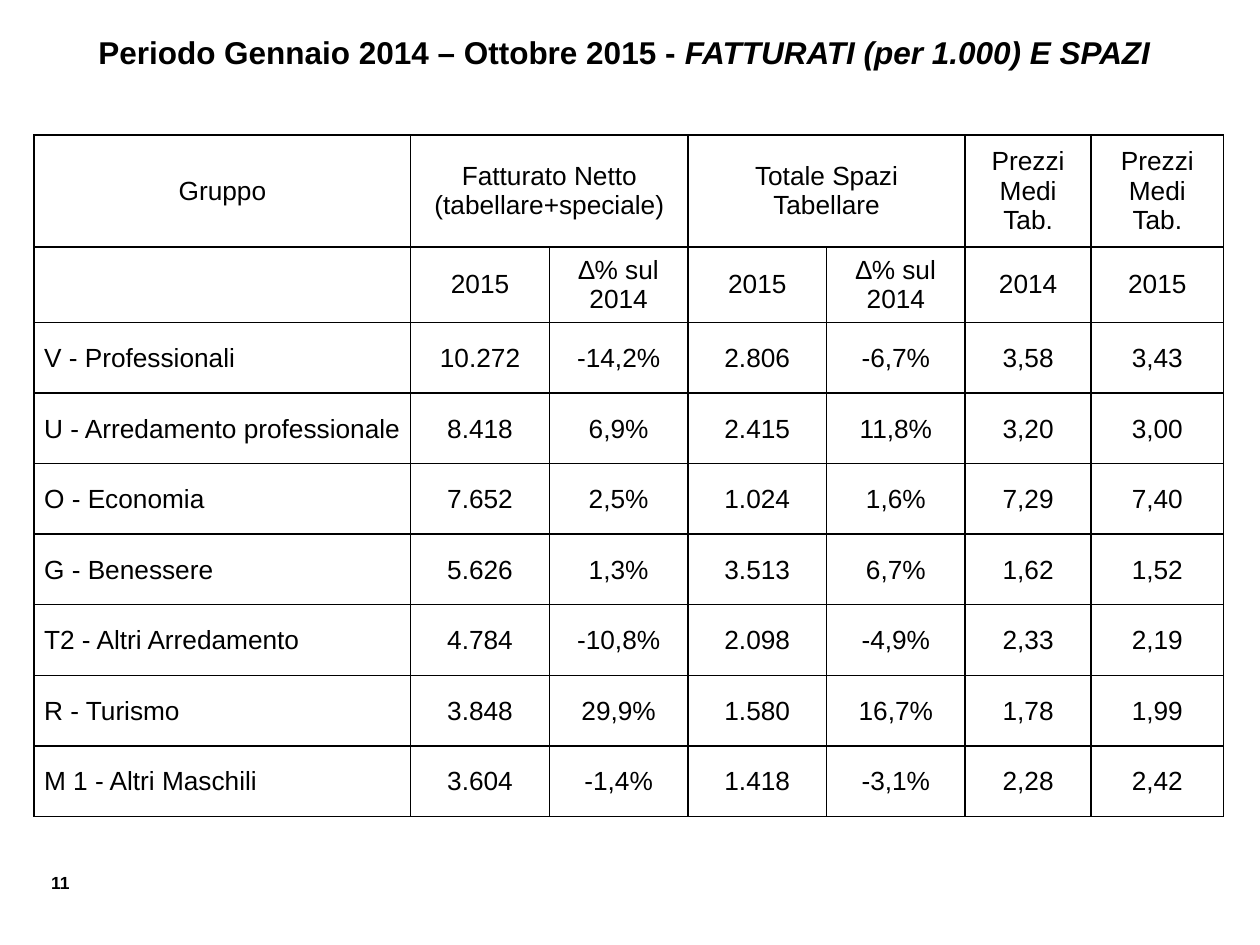
from dataclasses import dataclass

from lxml import etree
from pptx import Presentation
from pptx.dml.color import RGBColor
from pptx.enum.text import MSO_ANCHOR, PP_ALIGN
from pptx.oxml.ns import qn
from pptx.util import Inches, Pt

LEFT, MID, RIGHT = PP_ALIGN.LEFT, PP_ALIGN.CENTER, PP_ALIGN.RIGHT
CENTRE = MSO_ANCHOR.MIDDLE
BLACK = RGBColor(0, 0, 0)
FACE = "Arial"
WIDE, HIGH = 10, 7.5
COLS = [2.99, 1.1, 1.1, 1.1, 1.1, 1, 1.05]
HEAD_ROWS = [0.89, 0.6]
DATA_ROW = 0.56


@dataclass
class Label:
    left: float  # shares of the slide
    top: float
    width: float
    height: float
    runs: list[tuple[str, bool]]  # text, italic
    size: float
    align: PP_ALIGN


LABELS = [
    Label(0.027, 0.028, 0.937, 0.095,
          [("Periodo Gennaio 2014 – Ottobre 2015 - ", False),
           ("FATTURATI (per 1.000) E SPAZI", True)], 18, MID),
    Label(0.019, 0.916, 0.046, 0.036, [("11", False)], 10, RIGHT),
]

HEADS = [
    ["Gruppo", "Fatturato Netto (tabellare+speciale)", "",
     "Totale Spazi Tabellare", "", "Prezzi Medi Tab.", "Prezzi Medi Tab."],
    ["", "2015", "∆% sul 2014", "2015", "∆% sul 2014", "2014", "2015"],
]
DATA = [
    ["V - Professionali", "10.272", "-14,2%", "2.806", "-6,7%", "3,58", "3,43"],
    ["U - Arredamento professionale", "8.418", "6,9%", "2.415", "11,8%", "3,20", "3,00"],
    ["O - Economia", "7.652", "2,5%", "1.024", "1,6%", "7,29", "7,40"],
    ["G - Benessere", "5.626", "1,3%", "3.513", "6,7%", "1,62", "1,52"],
    ["T2 - Altri Arredamento", "4.784", "-10,8%", "2.098", "-4,9%", "2,33", "2,19"],
    ["R - Turismo", "3.848", "29,9%", "1.580", "16,7%", "1,78", "1,99"],
    ["M 1 - Altri Maschili", "3.604", "-1,4%", "1.418", "-3,1%", "2,28", "2,42"],
]


def style(para, size: float, align: PP_ALIGN, bold: bool = False) -> None:
    para.alignment = align
    font = para.font
    font.name, font.size, font.bold = FACE, Pt(size), bold
    font.color.rgb = BLACK


def add_label(slide, label: Label) -> None:
    box = slide.shapes.add_textbox(
        Inches(label.left * WIDE), Inches(label.top * HIGH),
        Inches(label.width * WIDE), Inches(label.height * HIGH))
    box.text_frame.word_wrap = True
    para = box.text_frame.paragraphs[0]
    style(para, label.size, label.align, True)
    for text, italic in label.runs:
        run = para.add_run()
        run.text = text
        if italic:
            run.font.italic = True


def add_edges(cell) -> None:
    props = cell._tc.get_or_add_tcPr()
    for side in ("lnL", "lnR", "lnT", "lnB"):
        line = etree.SubElement(props, qn(f"a:{side}"), w=str(Pt(1)))
        fill = etree.SubElement(line, qn("a:solidFill"))
        etree.SubElement(fill, qn("a:srgbClr"), val=str(BLACK))


def fill_cell(cell, text: str, head: bool, first: bool) -> None:
    add_edges(cell)
    cell.fill.background()
    cell.vertical_anchor = CENTRE
    if head:
        pads = (0.1, 0.05, 0.1, 0.05)
    else:
        pads = (0.08 if first else 0.01, 0.01, 0.01, 0)
    (cell.margin_left, cell.margin_top,
     cell.margin_right, cell.margin_bottom) = map(Inches, pads)
    para = cell.text_frame.paragraphs[0]
    if text:
        para.text = text
    style(para, 15, LEFT if first and not head else MID)


def add_grid(slide, left: float, top: float) -> None:
    rows = HEADS + DATA
    tall = HEAD_ROWS + [DATA_ROW] * len(DATA)
    table = slide.shapes.add_table(
        len(rows), len(COLS), Inches(left), Inches(top),
        Inches(sum(COLS)), Inches(sum(tall))).table
    table.first_row = table.horz_banding = False
    for col, width in zip(table.columns, COLS):
        col.width = Inches(width)
    for r, (texts, height) in enumerate(zip(rows, tall)):
        table.rows[r].height = Inches(height)
        for c, text in enumerate(texts):
            fill_cell(table.cell(r, c), text, r < len(HEADS), c == 0)
    # Paired headings span two columns
    for c in (1, 3):
        table.cell(0, c).merge(table.cell(0, c + 1))


def main() -> None:
    deck = Presentation()
    deck.slide_width, deck.slide_height = Inches(WIDE), Inches(HIGH)
    slide = deck.slides.add_slide(deck.slide_layouts[6])
    # Title and page number
    for label in LABELS:
        add_label(slide, label)
    # Revenue and space table
    add_grid(slide, 0.27, 1.07)
    deck.save("out.pptx")


if __name__ == "__main__":
    main()
